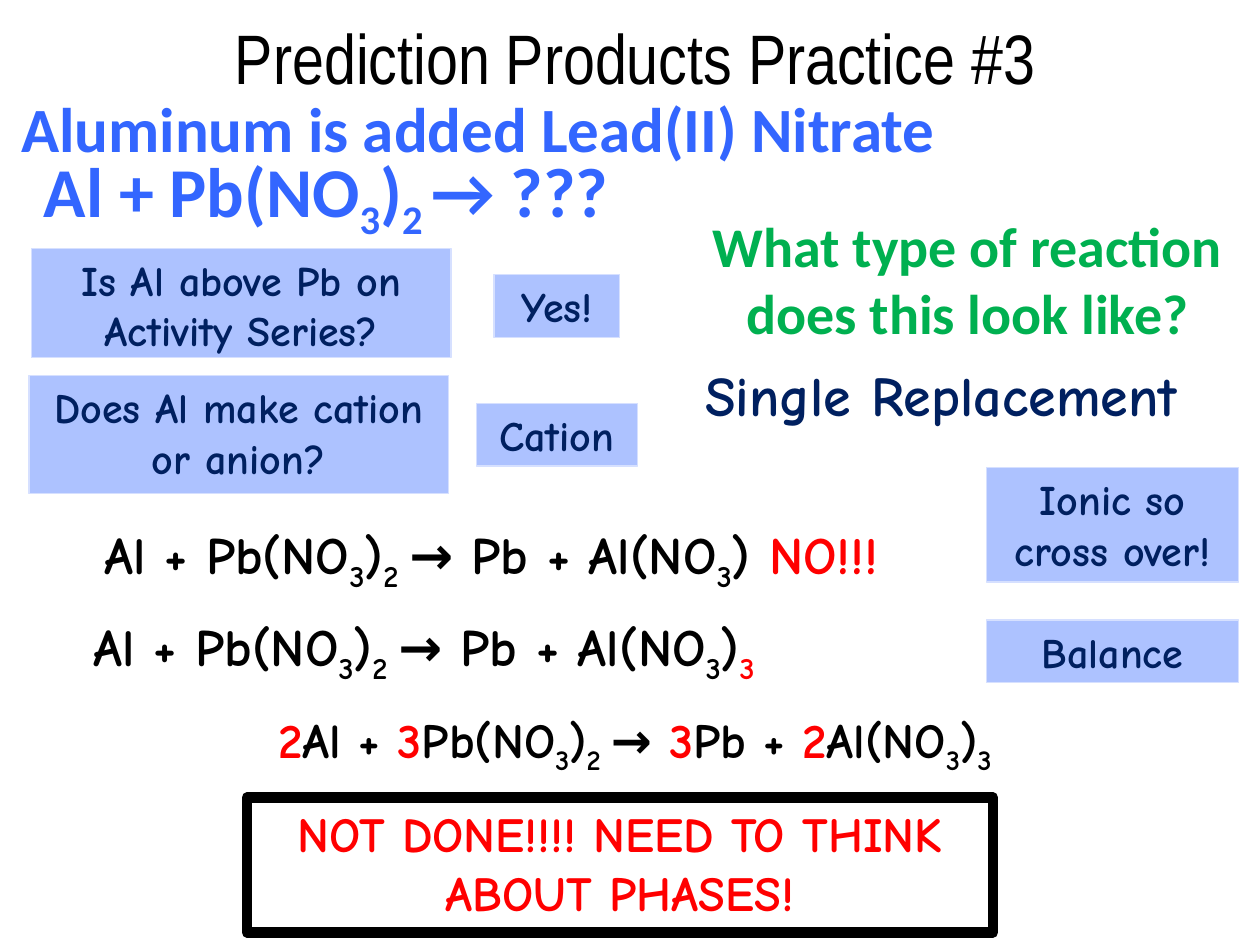
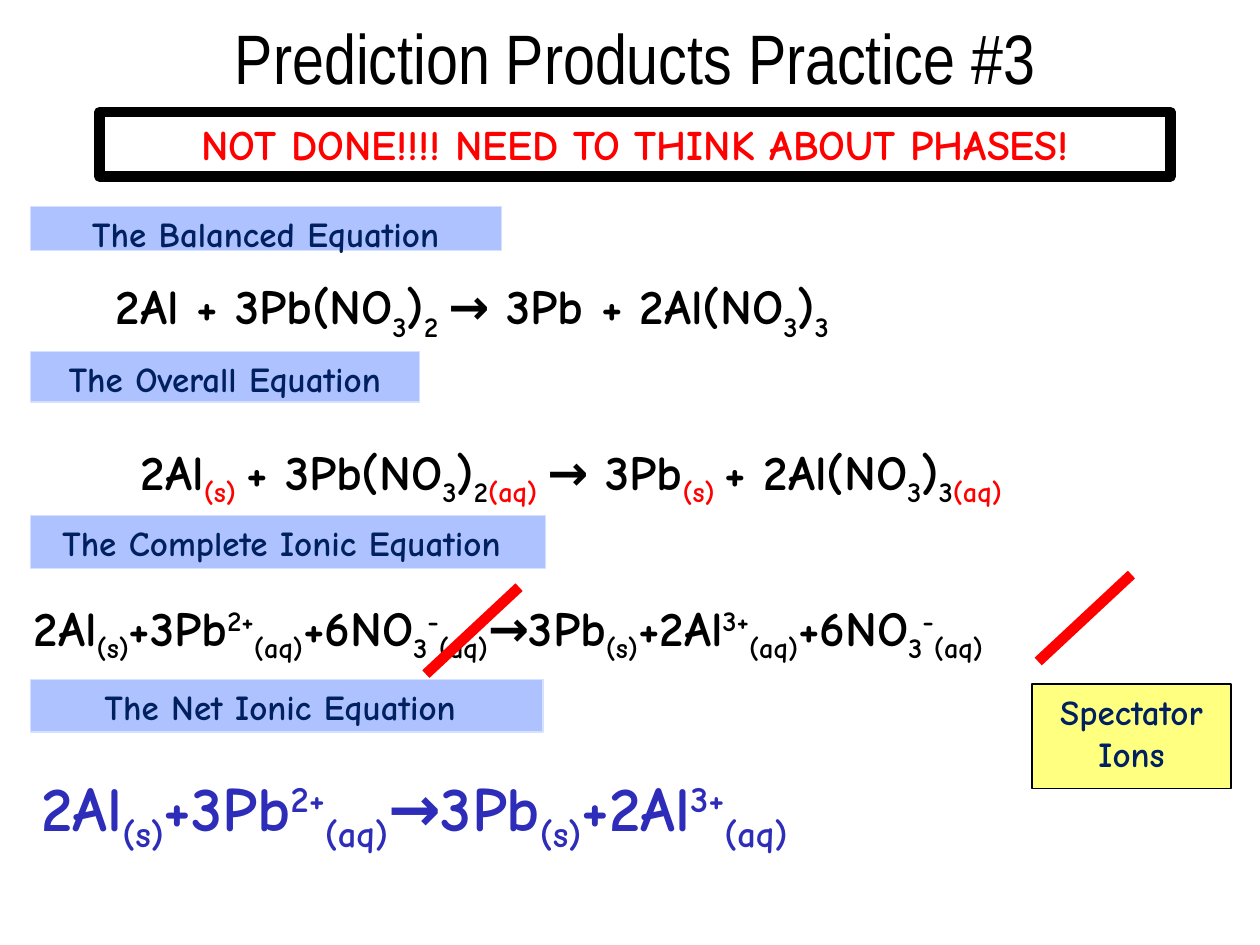
from lxml import etree
from pptx import Presentation
from pptx.dml.color import RGBColor
from pptx.enum.shapes import MSO_CONNECTOR, MSO_SHAPE
from pptx.enum.text import MSO_ANCHOR, PP_ALIGN
from pptx.oxml.ns import qn
from pptx.util import Inches, Pt

TITLE = "Prediction Products Practice #3"
WARNING = "NOT DONE!!!! NEED TO THINK ABOUT PHASES!"
BODY_FONT = "Comic Neue"
BLACK, WHITE, RED = "000000", "FFFFFF", "FF0000"
NAVY, BLUE, GREEN, INDIGO = "002060", "3366FF", "00B050", "2D2DB9"
LABEL_FILL, LABEL_LINE, NOTE_FILL = "ADC2FF", "D6E0FF", "FFFF80"
BASELINES = {"_": "-25000", "^": "30000"}
LEFT, CENTER = PP_ALIGN.LEFT, PP_ALIGN.CENTER


def rgb(color):
    return RGBColor.from_string(color)


def write(tf, text, size=28, font=BODY_FONT, color=BLACK, bold=True,
          align=CENTER, spacing=None, anchor=MSO_ANCHOR.TOP):
    """Write text whose parts, split by |, may start with ! (red), _ (sub) or ^ (super)."""
    tf.word_wrap = True
    tf.vertical_anchor = anchor
    p = tf.paragraphs[0]
    p.alignment = align
    p.line_spacing = spacing
    for part in text.split("|"):
        is_red = part.startswith("!")
        part = part[1:] if is_red else part
        baseline = BASELINES.get(part[0])
        r = p.add_run()
        r.text = part[1:] if baseline else part
        r.font.name, r.font.size, r.font.bold = font, Pt(size), bold
        r.font.color.rgb = rgb(RED if is_red else color)
        if baseline:
            r.font._element.set("baseline", baseline)


def add_text(slide, box, text, **style):
    sp = slide.shapes.add_textbox(*map(Inches, box))
    write(sp.text_frame, text, **style)


def add_box(slide, box, text, fill=LABEL_FILL, line=LABEL_LINE, line_width=0.75,
            color=NAVY, **style):
    sp = slide.shapes.add_shape(MSO_SHAPE.RECTANGLE, *map(Inches, box))
    sp.shadow.inherit = False
    sp.fill.solid()
    sp.fill.fore_color.rgb = rgb(fill)
    sp.line.color.rgb = rgb(line)
    sp.line.width = Pt(line_width)
    write(sp.text_frame, text, color=color, **style)


def add_warning(slide, box, size):
    add_box(slide, box, WARNING, fill=WHITE, line=BLACK, line_width=6,
            color=RED, size=size)


def add_strike(slide, right, top, width=0.74, height=0.69):
    """Cross out a spectator ion with a red slanted line."""
    ends = right, top, right - width, top + height
    line = slide.shapes.add_connector(MSO_CONNECTOR.STRAIGHT, *map(Inches, ends))
    line.line.color.rgb = rgb(RED)
    line.line.width = Pt(6)
    etree.SubElement(line._element.spPr, qn("a:effectLst"))


def add_titled_slide(prs):
    s = prs.slides.add_slide(prs.slide_layouts[5])
    title = s.shapes.title
    title.left, title.top, title.width, title.height = map(Inches, (0.25, 0.01, 9.58, 0.88))
    write(title.text_frame, TITLE, size=40, font="Arial Narrow", bold=False,
          anchor=MSO_ANCHOR.MIDDLE)
    return s


def build_prediction(prs):
    s = add_titled_slide(prs)
    problem = dict(font="Calibri", color=BLUE, align=LEFT)
    add_text(s, (0.07, 0.66, 9.08, 0.71), "Aluminum is added Lead(II) Nitrate",
             size=36, **problem)
    add_text(s, (0.25, 1.12, 9.33, 0.77), "Al + Pb(NO|_3|)|_2 |→ ???", size=40, **problem)
    add_text(s, (5.25, 1.63, 4.86, 1.18), "What type of reaction does this look like?",
             size=32, font="Calibri", color=GREEN)
    add_text(s, (5.5, 2.81, 4.5, 0.64), "Single Replacement", size=32, color=NAVY, align=LEFT)

    attempt = "Al + Pb(NO|_3|)|_2 |→ Pb + Al(NO|_3|"
    add_text(s, (-0.6, 4.09, 9, 0.61), attempt + ") |!NO!!!", size=30)
    add_text(s, (-0.6, 4.82, 8.02, 0.61), attempt + ")|!_3 ", size=30)
    add_text(s, (0.04, 5.58, 10, 0.57),
             "!2|Al + |!3|Pb(NO|_3|)|_2 |→ |!3|Pb + |!2|Al(NO|_3|)|_3")

    for box, text in (
        ((0.25, 1.97, 3.33, 0.87), "Is Al above Pb on Activity Series?"),
        ((3.92, 2.18, 1, 0.5), "Yes!"),
        ((0.23, 2.98, 3.33, 0.94), "Does Al make cation or anion?"),
        ((3.78, 3.2, 1.28, 0.5), "Cation"),
        ((7.83, 3.71, 2, 0.91), "Ionic so cross over!"),
        ((7.83, 4.92, 2, 0.5), "Balance"),
    ):
        add_box(s, box, text, size=24)
    add_warning(s, (1.96, 6.33, 5.92, 1.07), 28)


def build_ionic_equations(prs):
    s = add_titled_slide(prs)
    add_warning(s, (0.79, 0.89, 8.5, 0.51), 24)
    for top, width, height, text in (
        (1.64, 3.74, 0.35, "The Balanced Equation"),
        (2.79, 3.09, 0.4, "The Overall Equation"),
        (4.09, 4.09, 0.42, "The Complete Ionic Equation "),
        (5.39, 4.07, 0.42, "The Net Ionic Equation "),
    ):
        add_box(s, (0.24, top, width, height), text, size=20)

    reactants, products = "2Al|_(s)|+3Pb|^2+|_(aq)|", "→3Pb|_(s)|+2Al|^3+|_(aq)"
    spectator = "+6NO|_3|^-|_(aq)"
    add_text(s, (-1.25, 2.14, 10, 0.57), "2Al + 3Pb(NO|_3|)|_2 |→ 3Pb + 2Al(NO|_3|)|_3")
    add_text(s, (-0.59, 3.19, 10.25, 0.81),
             "2Al|!_(s) |+ 3Pb(NO|_3|)|_2|!_(aq) |→ 3Pb|!_(s) |+ 2Al(NO|_3|)|_3|!_(aq)",
             spacing=1.5)
    add_text(s, (0.17, 4.69, 10, 0.57),
             f"{reactants}{spectator}|{products}|{spectator}", align=LEFT)
    add_text(s, (0.23, 6.05, 10, 0.71), reactants + products,
             size=36, color=INDIGO, align=LEFT)

    add_strike(s, 4.12, 4.66)
    add_strike(s, 8.98, 4.56)
    add_box(s, (8.19, 5.43, 1.58, 0.83), "Spectator Ions", fill=NOTE_FILL, line=BLACK, size=20)


def main():
    prs = Presentation()
    prs.slide_width, prs.slide_height = Inches(10), Inches(7.5)
    build_prediction(prs)
    build_ionic_equations(prs)
    prs.save("out.pptx")


if __name__ == "__main__":
    main()
